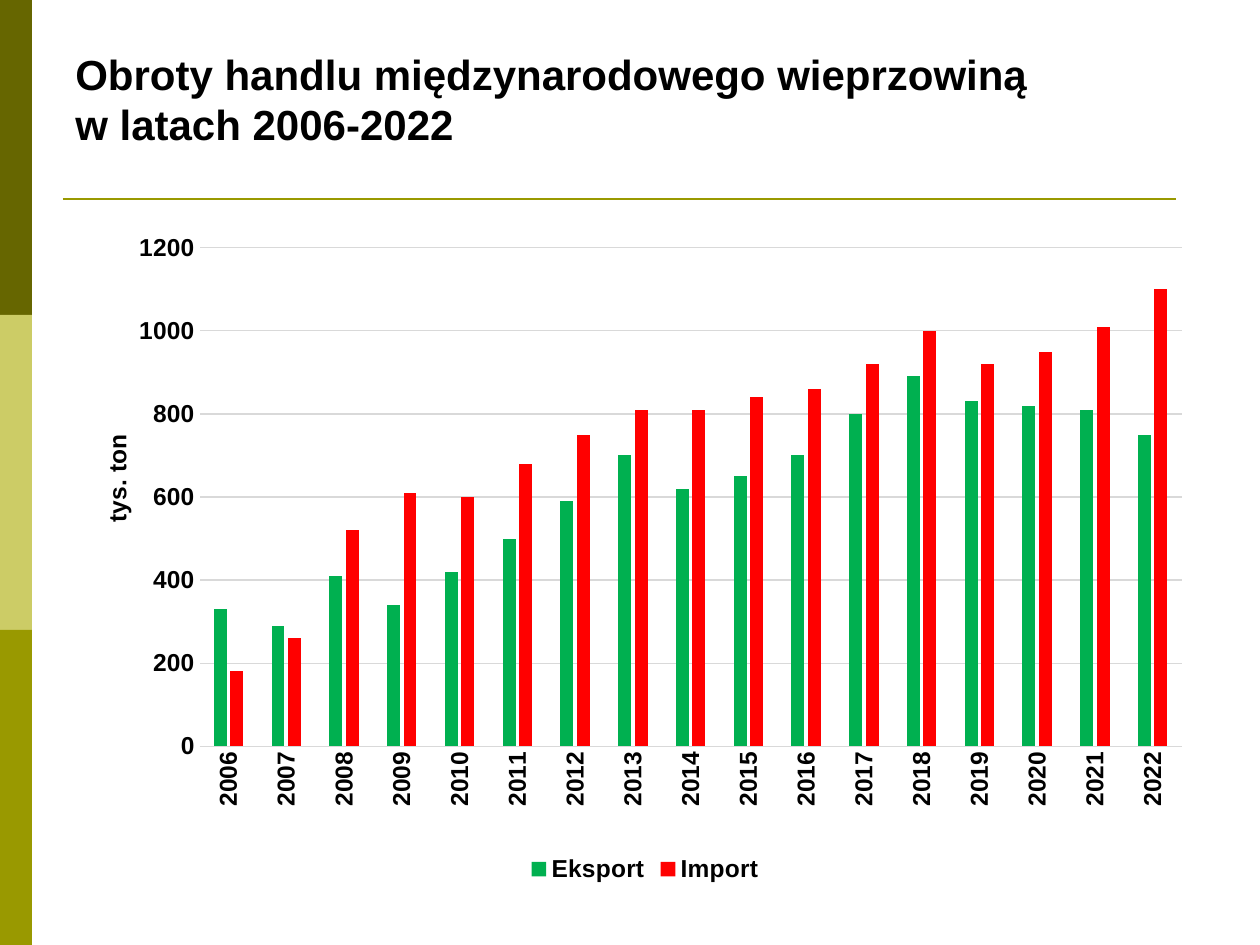
from lxml import etree
from pptx import Presentation
from pptx import util as u
from pptx.chart.data import CategoryChartData
from pptx.dml.color import RGBColor
from pptx.enum import chart as ch, shapes, text
from pptx.oxml import parse_xml
from pptx.oxml.ns import nsdecls, qn

PX = 914400 // 126  # EMU per px
BLACK = RGBColor(0x00, 0x00, 0x00)
DARK_OLIVE = RGBColor(0x66, 0x66, 0x00)
LIGHT_OLIVE = RGBColor(0xCC, 0xCC, 0x66)
OLIVE = RGBColor(0x99, 0x99, 0x00)
GRID = RGBColor(0xD9, 0xD9, 0xD9)
GREEN = RGBColor(0x00, 0xB0, 0x50)
RED = RGBColor(0xFF, 0x00, 0x00)


def write(tf, content, size=14, bold=True, color=BLACK, font="Arial"):
    p = tf.paragraphs[0]
    for i, line in enumerate(content.split("\n")):
        if i:
            p.add_line_break()
        r = p.add_run()
        r.text = line
        r.font.size, r.font.bold, r.font.name = u.Pt(size), bold, font
        r.font.color.rgb = color


def set_layout(layout, **values):
    manual = etree.SubElement(layout, qn("c:manualLayout"))
    for tag, val in values.items():
        etree.SubElement(manual, qn("c:" + tag)).set("val", str(val))


prs = Presentation()
prs.slide_width, prs.slide_height = 1260 * PX, 945 * PX
s = prs.slides.add_slide(prs.slide_layouts[6])

# Side bands
for i, color in enumerate((DARK_OLIVE, LIGHT_OLIVE, OLIVE)):
    sp = s.shapes.add_shape(shapes.MSO_SHAPE.RECTANGLE, 0, i * 315 * PX, 32 * PX, 315 * PX)
    sp.shadow.inherit = False
    sp.fill.solid()
    sp.fill.fore_color.rgb = color
    sp.line.fill.background()

# Rule under the title
rule = s.shapes.add_connector(shapes.MSO_CONNECTOR.STRAIGHT, 63 * PX, 199 * PX, 1176 * PX, 199 * PX)
rule.line.color.rgb = OLIVE
rule.line.width = u.Pt(1.5)
etree.SubElement(rule._element.spPr, qn("a:effectLst"))

# Title
tf = s.shapes.add_textbox(63 * PX, 38 * PX, 1202 * PX, 117 * PX).text_frame
tf.word_wrap = True
tf.vertical_anchor = text.MSO_ANCHOR.BOTTOM
write(tf, "Obroty handlu międzynarodowego wieprzowiną\nw latach 2006-2022", size=24)

# Chart data
data = CategoryChartData()
data.categories = [str(year) for year in range(2006, 2023)]
data.add_series("Eksport", (330, 290, 410, 340, 420, 500, 590, 700, 620,
                            650, 700, 800, 890, 830, 820, 810, 750))
data.add_series("Import", (180, 260, 520, 610, 600, 680, 750, 810, 810,
                           840, 860, 920, 1000, 920, 950, 1010, 1100))
chart = s.shapes.add_chart(ch.XL_CHART_TYPE.COLUMN_CLUSTERED,
                           74 * PX, 214 * PX, 1142 * PX, 674 * PX, data).chart
chart.has_title = False
chart.font.size, chart.font.bold, chart.font.name = u.Pt(14), True, "Arial"
chart.font.color.rgb = BLACK

# Columns
plot = chart.plots[0]
plot.gap_width, plot.overlap, plot.vary_by_categories = 219, -27, False
for series, color in zip(plot.series, (GREEN, RED)):
    series.format.fill.solid()
    series.format.fill.fore_color.rgb = color

# Axes
cat, val = chart.category_axis, chart.value_axis
for axis in (cat, val):
    axis.major_tick_mark = axis.minor_tick_mark = ch.XL_TICK_MARK.NONE
cat.tick_labels.font.size = u.Pt(14)
cat._element.find(qn("c:txPr")).find(qn("a:bodyPr")).set("rot", "-5400000")
val.minimum_scale, val.maximum_scale, val.major_unit = 0, 1200, 200
val.format.line.fill.background()
for line in (cat.format.line, val.major_gridlines.format.line):
    line.color.rgb = GRID
    line.width = u.Pt(0.75)
tf = val.axis_title.text_frame
write(tf, "tys. ton")
tf._txBody.find(qn("a:bodyPr")).set("rot", "-5400000")
tf._txBody.find(qn("a:bodyPr")).set("vert", "horz")
title = val.axis_title._element
layout = title.find(qn("c:layout"))
if layout is None:
    layout = parse_xml(f"<c:layout {nsdecls('c')}/>")
    title.find(qn("c:tx")).addnext(layout)
set_layout(layout, xMode="edge", yMode="edge", x=0.02, y=0.32)

# Legend and plot area
chart.has_legend = True
chart.legend.position = ch.XL_LEGEND_POSITION.BOTTOM
chart.legend.include_in_layout = False
chart.legend.font.size, chart.legend.font.bold = u.Pt(14), True
area = chart._chartSpace.chart.plotArea
layout = area.find(qn("c:layout"))
if layout is None:
    layout = parse_xml(f"<c:layout {nsdecls('c')}/>")
    area.insert(0, layout)
set_layout(layout, layoutTarget="inner", xMode="edge", yMode="edge",
           x=0.11, y=0.05, w=0.86, h=0.74)

prs.save("out.pptx")
